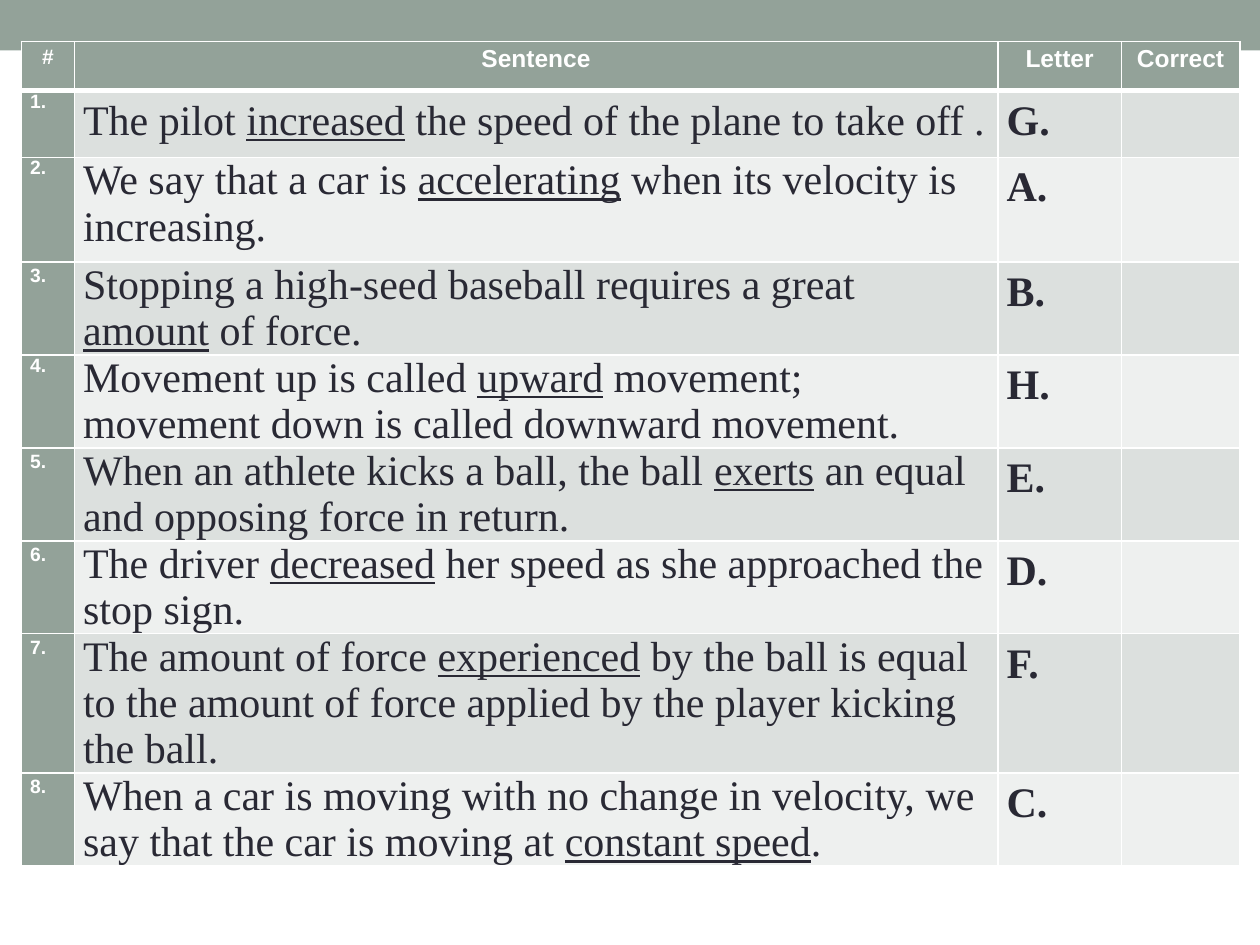
import pptx
import pptx.util
import pptx.dml.color
import pptx.enum.shapes
import pptx.enum.text
import pptx.oxml
import pptx.oxml.ns

Inches, Pt = pptx.util.Inches, pptx.util.Pt
ALIGN = pptx.enum.text.PP_ALIGN
COLORS = {"sage": "93A299", "odd": "DCE0DE", "even": "EEF0EF",
          "ink": "292934", "white": "FFFFFF"}
SANS, SERIF = "Arial", "Times New Roman"

HEADERS = ["#", "Sentence", "Letter", "Correct"]
COLUMNS = [0.42, 7.33, 0.98, 0.94]
ROWS = [0.39, 0.53, 0.83, 0.54, 0.54, 0.73, 0.54, 0.99, 0.54]
SINGLE_SPACED = {1, 2, 4}  # numbers set without extra line spacing

# text before the underlined words, underlined words, text after, letter
ANSWERS = [
    ("The pilot ", "increased", " the speed of the plane to take off .", "G."),
    ("We say that a car is ", "accelerating",
     " when its velocity is increasing.", "A."),
    ("Stopping a high-seed baseball requires a great ", "amount",
     " of force.", "B."),
    ("Movement up is called ", "upward",
     " movement; movement down is called downward movement.", "H."),
    ("When an athlete kicks a ball, the ball ", "exerts",
     " an equal and opposing force in return.", "E."),
    ("The driver ", "decreased",
     " her speed as she approached the stop sign.", "D."),
    ("The amount of force ", "experienced",
     " by the ball is equal to the amount of force applied by the player "
     "kicking the ball.", "F."),
    ("When a car is moving with no change in velocity, we say that the car "
     "is moving at ", "constant speed", ".", "C."),
]


def rgb(name):
    return pptx.dml.color.RGBColor.from_string(COLORS[name])


def add_run(p, text, size=24, font=SERIF, color="ink", bold=False,
            underline=False):
    r = p.add_run()
    r.text = text
    r.font.size, r.font.name = Pt(size), font
    r.font.bold, r.font.underline = bold, underline
    r.font.color.rgb = rgb(color)


class Deck:
    """Holds the presentation, its current slide and the table style."""

    def __init__(self, width, height):
        self.prs = pptx.Presentation()
        self.prs.slide_width, self.prs.slide_height = Inches(width), Inches(height)
        self.s = self.prs.slides.add_slide(self.prs.slide_layouts[6])

    def box(self, x, y, w, h):
        """Turn shares of the slide's size into lengths."""
        pw, ph = self.prs.slide_width, self.prs.slide_height
        return int(x * pw), int(y * ph), int(w * pw), int(h * ph)

    def band(self, x, y, w, h, color):
        sp = self.s.shapes.add_shape(
            pptx.enum.shapes.MSO_SHAPE.RECTANGLE, *self.box(x, y, w, h))
        sp.shadow.inherit = False
        sp.fill.solid()
        sp.fill.fore_color.rgb = rgb(color)
        sp.line.fill.background()

    def table(self, x, y, w, h, columns, rows):
        box = self.box(x, y, w, h)
        frame = self.s.shapes.add_table(len(rows), len(columns), *box)
        for column, width in zip(frame.table.columns, columns):
            column.width = Inches(width)
        for row, height in zip(frame.table.rows, rows):
            row.height = Inches(height)
        frame.height = box[3]
        return frame.table

    def cell(self, cell, fill, runs=(), align=None, line=None, space=None,
             top=1, bottom=1):
        """Format one cell; runs are (text, format) pairs."""
        cell.margin_left = cell.margin_right = Inches(0.07)
        cell.margin_top = cell.margin_bottom = 0
        cell.fill.solid()
        cell.fill.fore_color.rgb = rgb(fill)
        tcPr = cell._tc.get_or_add_tcPr()
        borders = {"lnL": 1, "lnR": 1, "lnT": top, "lnB": bottom}
        for i, (side, width) in enumerate(borders.items()):
            tcPr.insert(i, pptx.oxml.parse_xml(
                f'<a:{side} {pptx.oxml.ns.nsdecls("a")} w="{Pt(width)}">'
                f'<a:solidFill><a:srgbClr val="{COLORS["white"]}"/>'
                f'</a:solidFill></a:{side}>'))
        p = cell.text_frame.paragraphs[0]
        p.alignment, p.line_spacing = align, line
        if space:
            p.space_before = p.space_after = Pt(space)
        for text, style in runs:
            add_run(p, text, **style)


def main():
    deck = Deck(10, 7.5)
    deck.band(0, 0, 1, 0.4 / 7.5, "sage")
    table = deck.table(0.017, 0.044, 0.967, 6.95 / 7.5, COLUMNS, ROWS)
    label = {"font": SANS, "color": "white", "bold": True}

    for c, text in enumerate(HEADERS):
        style = {**label, "size": 14 if c else 12}
        deck.cell(table.cell(0, c), "sage", [(text, style)], ALIGN.CENTER,
                  line=1.15, space=6, bottom=3)

    for n, (before, key, after, letter) in enumerate(ANSWERS, 1):
        fill = "odd" if n % 2 else "even"
        top = 3 if n == 1 else 1
        number, sentence, answer, correct = (table.cell(n, c) for c in range(4))
        deck.cell(number, "sage", [(f"{n}. ", {**label, "size": 11})],
                  ALIGN.JUSTIFY, line=None if n in SINGLE_SPACED else 1.15,
                  space=6, top=top)
        deck.cell(sentence, fill,
                  [(before, {}), (key, {"underline": True}), (after, {})],
                  line=1.15 if n == 1 else None, top=top)
        deck.cell(answer, fill, [(letter, {"bold": True})], line=1.15, top=top)
        deck.cell(correct, fill, top=top)

    deck.prs.save("out.pptx")


if __name__ == "__main__":
    main()
